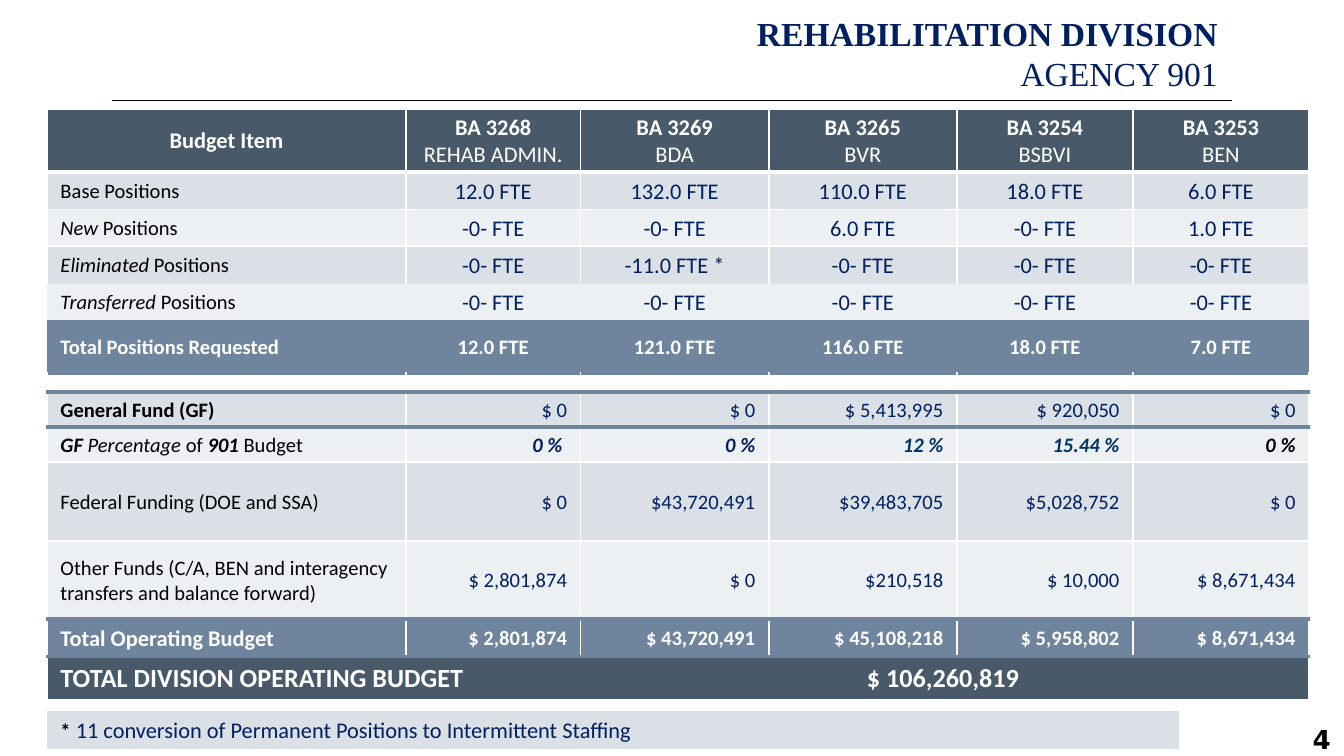
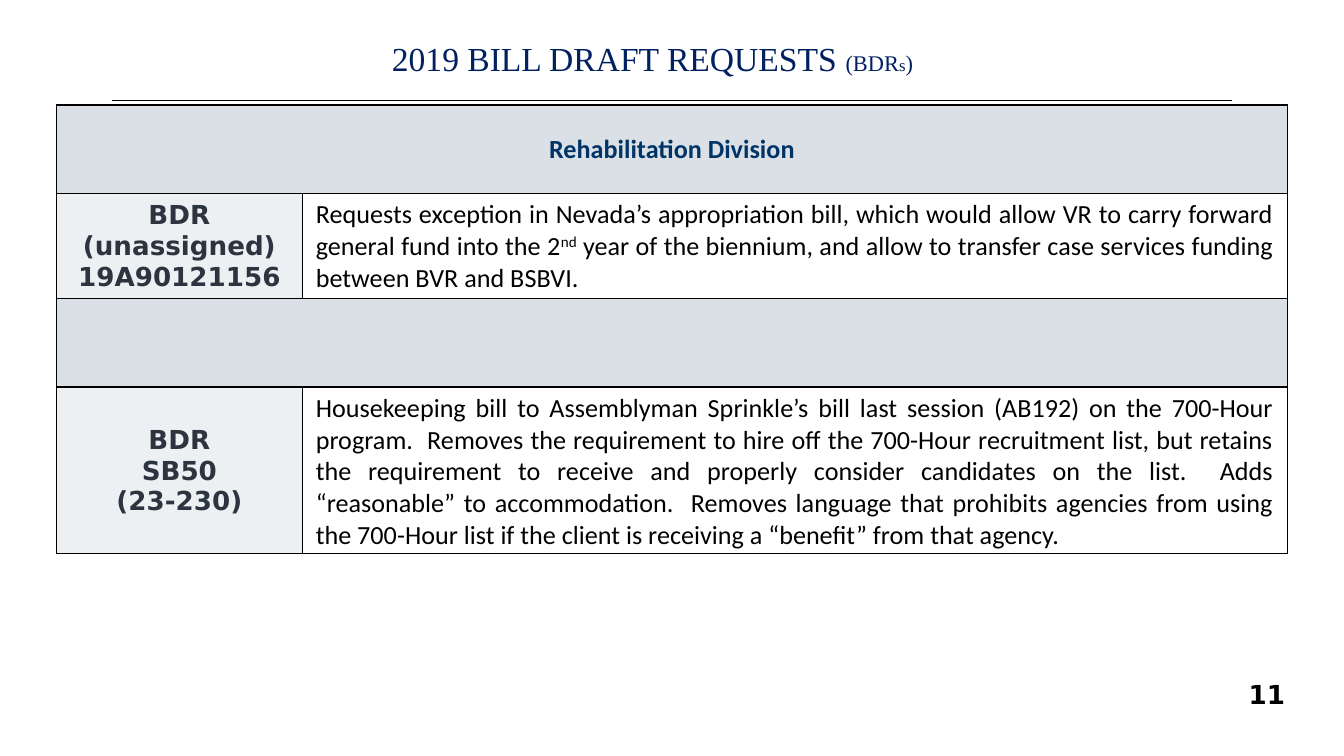
"""Build two slides on the Rehabilitation Division budget and bill draft requests."""
from lxml import etree
from pptx import Presentation
from pptx.dml.color import RGBColor
from pptx.enum.shapes import MSO_CONNECTOR
from pptx.enum.text import MSO_ANCHOR, PP_ALIGN
from pptx.oxml.ns import qn
from pptx.util import Inches, Pt

LEFT, MID, RIGHT, JUST = PP_ALIGN.LEFT, PP_ALIGN.CENTER, PP_ALIGN.RIGHT, PP_ALIGN.JUSTIFY
CENTRE, TOP = MSO_ANCHOR.MIDDLE, MSO_ANCHOR.TOP
STRAIGHT = MSO_CONNECTOR.STRAIGHT
WHITE = RGBColor(0xFF, 0xFF, 0xFF)
BLACK = RGBColor(0, 0, 0)
NAVY = RGBColor(0, 0x20, 0x60)
BLUE = RGBColor(0, 0x33, 0x66)
SLATE = RGBColor(0x48, 0x59, 0x6A)
STEEL = RGBColor(0x6E, 0x85, 0x9D)
PALE = RGBColor(0xDA, 0xE0, 0xE6)
LIGHT = RGBColor(0xED, 0xF0, 0xF3)
INK = RGBColor(0x2C, 0x35, 0x3F)
SANS, SERIF, WIDE = "Calibri", "Times New Roman", "DejaVu Sans"


def write(frame, paras, align, font=SANS):
    """Fill a text frame; each paragraph is a list of (text, size, colour, style) runs."""
    frame.word_wrap = True
    for n, runs in enumerate(paras):
        para = frame.paragraphs[0] if n == 0 else frame.add_paragraph()
        para.alignment = align
        for text, size, color, style in runs:
            run = para.add_run()
            run.text = text
            run.font.name = font
            run.font.size = Pt(size)
            run.font.color.rgb = color
            run.font.bold = "b" in style
            run.font.italic = "i" in style
            if "^" in style:
                run._r.get_or_add_rPr().set("baseline", "30000")


def paint(cell, fill, edges):
    """Set the insets, the left, right, top and bottom edges, and the fill of a cell."""
    cell.margin_left = cell.margin_right = Inches(0.1)
    cell.margin_top, cell.margin_bottom = Inches(0.04), Inches(0.03)
    cell.vertical_anchor = CENTRE
    props = cell._tc.get_or_add_tcPr()
    for side, edge in zip("LRTB", edges):
        line = etree.SubElement(props, qn("a:ln" + side))
        if edge is None:
            etree.SubElement(line, qn("a:noFill"))
            continue
        color, width = edge
        line.set("w", str(Pt(width)))
        solid = etree.SubElement(line, qn("a:solidFill"))
        etree.SubElement(solid, qn("a:srgbClr"), val=str(color))
    if fill is None:
        cell.fill.background()
    else:
        cell.fill.solid()
        cell.fill.fore_color.rgb = fill


deck = Presentation()
deck.slide_width, deck.slide_height = Inches(10), Inches(10 * 9 / 16)
pages = []
for num, left, top in (("4", 7.67, 5.33), ("11", 7.33, 5)):
    page = deck.slides.add_slide(deck.slide_layouts[6])
    rule = page.shapes.add_connector(
        STRAIGHT, Inches(0.83), Inches(0.75), Inches(9.17), Inches(0.75))
    rule.line.color.rgb = BLACK
    rule.line.width = Pt(0.75)
    etree.SubElement(rule._element.spPr, qn("a:effectLst"))
    box = page.shapes.add_textbox(Inches(left), Inches(top), Inches(2.33), Inches(0.39))
    write(box.text_frame, [[(num, 14, BLACK, "b")]], RIGHT, WIDE)
    pages.append(page)

heads = (
    (0.83, 0.04, 8.33, CENTRE, RIGHT,
     [[("REHABILITATION DIVISION", 18, NAVY, "b")], [("AGENCY 901", 18, NAVY, "")]]),
    (-0.67, 0.23, 11.05, TOP, MID,
     [[("2019 BILL DRAFT REQUESTS ", 18, NAVY, ""), ("(BDR", 12, NAVY, ""),
       ("s", 9, NAVY, ""), (")", 12, NAVY, "")]]),
)
for page, (left, top, width, anchor, align, paras) in zip(pages, heads):
    box = page.shapes.add_textbox(Inches(left), Inches(top), Inches(width), Inches(0.71))
    box.text_frame.vertical_anchor = anchor
    write(box.text_frame, paras, align, SERIF)

grids = []
for page, left, top, cols, rows in (
    (pages[0], 0.35, 0.81, (2.67, 1.3, 1.4, 1.4, 1.31, 1.31),
     (0.47, 0.28, 0.27, 0.28, 0.27, 0.4, 0.13, 0.26, 0.26, 0.59, 0.58, 0.28, 0.32)),
    (pages[0], 0.35, 5.29, (8.42,), (0.28,)),
    (pages[1], 0.42, 0.78, (1.83, 7.33), (0.66, 0.78, 0.66, 1.24)),
):
    grid = page.shapes.add_table(
        len(rows), len(cols), Inches(left), Inches(top),
        Inches(sum(cols)), Inches(sum(rows))).table
    grid.first_row = grid.horz_banding = False
    for col, width in zip(grid.columns, cols):
        col.width = Inches(width)
    for row, height in zip(grid.rows, rows):
        row.height = Inches(height)
    grids.append(grid)
budget, note, bills = grids

thin, band, bare = (WHITE, 1), (STEEL, 2.25), (None,) * 4
plain = (thin,) * 4
under = (thin, thin, thin, band)
over = (thin, thin, band, thin)
both = (thin, thin, band, band)
none = "-0- FTE"
navy, white = (NAVY,) * 5, (WHITE,) * 5
lines = (
    (PALE, (thin, thin, (WHITE, 3), thin), [("Base Positions", 11, BLACK, "")],
     MID, 12, navy, "", ("12.0 FTE", "132.0 FTE", "110.0 FTE", "18.0 FTE", "6.0 FTE")),
    (LIGHT, plain, [("New", 11, BLACK, "i"), (" Positions", 11, BLACK, "")],
     MID, 12, navy, "", (none, none, "6.0 FTE", none, "1.0 FTE")),
    (PALE, (thin, thin, thin, None),
     [("Eliminated ", 11, BLACK, "i"), ("Positions", 11, BLACK, "")],
     MID, 12, navy, "", (none, "-11.0 FTE *", none, none, none)),
    (LIGHT, bare, [("Transferred ", 11, BLACK, "i"), ("Positions", 11, BLACK, "")],
     MID, 12, navy, "", (none,) * 5),
    (STEEL, (None, None, None, band), [("Total Positions Requested", 11, WHITE, "b")],
     MID, 11, white, "b", ("12.0 FTE", "121.0 FTE", "116.0 FTE", "18.0 FTE", "7.0 FTE")),
    (WHITE, both, [], LEFT, 11, navy, "", ("",) * 5),
    (PALE, both, [("General Fund (GF)", 11, BLACK, "b")], RIGHT, 11, navy, "",
     ("$ 0", "$ 0", "$ 5,413,995", "$ 920,050", "$ 0")),
    (LIGHT, over,
     [("GF ", 11, BLACK, "bi"), ("Percentage", 11, BLACK, "i"), (" of ", 11, BLACK, ""),
      ("901", 11, BLACK, "bi"), (" Budget", 11, BLACK, "")],
     RIGHT, 11, (NAVY, NAVY, BLUE, BLUE, BLACK), "bi",
     ("0 % ", "0 %", "12 %", "15.44 %", "0 %")),
    (PALE, plain, [("Federal Funding (DOE and SSA)", 11, BLACK, "")], RIGHT, 11, navy, "",
     ("$ 0", "$43,720,491", "$39,483,705", "$5,028,752", "$ 0")),
    (LIGHT, under,
     [("Other Funds (C/A, BEN and interagency transfers and balance forward)",
       11, BLACK, "")],
     RIGHT, 11, navy, "", ("$ 2,801,874", "$ 0", "$210,518", "$ 10,000", "$ 8,671,434")),
    (STEEL, both, [("Total Operating Budget", 12, WHITE, "b")], RIGHT, 11, white, "b",
     ("$ 2,801,874", "$ 43,720,491", "$ 45,108,218", "$ 5,958,802", "$ 8,671,434")),
)
units = (("Budget Item",), ("BA 3268", "REHAB ADMIN."), ("BA 3269", "BDA"),
         ("BA 3265", "BVR"), ("BA 3254", "BSBVI"), ("BA 3253", "BEN"))
for c, unit in enumerate(units):
    cell = budget.cell(0, c)
    paint(cell, SLATE, (thin, thin, thin, (WHITE, 3)))
    write(cell.text_frame,
          [[(text, 12, WHITE, style)] for text, style in zip(unit, ("b", ""))], MID)

for r, (fill, edges, label, align, size, tints, style, values) in enumerate(lines, 1):
    runs = [label] + [[(v, size, t, style)] if v else [] for v, t in zip(values, tints)]
    for c, run in enumerate(runs):
        cell = budget.cell(r, c)
        paint(cell, fill, edges)
        write(cell.text_frame, [run], align if c else LEFT)
        if not run:
            para = cell.text_frame.paragraphs[0]._p
            etree.SubElement(para, qn("a:endParaRPr"), sz="400")

last = len(lines) + 1
for c in range(6):
    paint(budget.cell(last, c), SLATE, over)
total = budget.cell(last, 0)
total.merge(budget.cell(last, 5))
props = total.text_frame.paragraphs[0]._p.get_or_add_pPr()
tabs = etree.SubElement(props, qn("a:tabLst"))
etree.SubElement(tabs, qn("a:tab"), pos=str(Inches(6)), algn="l")
write(total.text_frame,
      [[("TOTAL DIVISION OPERATING BUDGET\t$ 106,260,819", 14, WHITE, "b")]], LEFT)

cell = note.cell(0, 0)
paint(cell, PALE, bare)
write(cell.text_frame,
      [[("*", 11, BLACK, "b"),
        (" 11 conversion of Permanent Positions to Intermittent Staffing", 12, NAVY, "")]], JUST)
cell.text_frame.paragraphs[0].space_after = Pt(6)

frame = ((BLACK, 1),) * 4
for r in (0, 2):
    for c in (0, 1):
        paint(bills.cell(r, c), PALE, frame)
    bills.cell(r, 0).merge(bills.cell(r, 1))
write(bills.cell(0, 0).text_frame, [[("Rehabilitation Division", 14, BLUE, "b")]], MID)
drafts = (
    (1, ("BDR", "(unassigned) 19A90121156"),
     [("Requests exception in Nevada’s appropriation bill, which would allow VR to carry "
       "forward general fund into the 2", 14, BLACK, ""),
      ("nd", 14, BLACK, "^"),
      (" year of the biennium, and allow to transfer case services funding between BVR "
       "and BSBVI.", 14, BLACK, "")]),
    (3, ("BDR", "SB50", "(23-230)"),
     [("Housekeeping bill to Assemblyman Sprinkle’s bill last session (AB192) on the "
       "700-Hour program.  Removes the requirement to hire off the 700-Hour recruitment "
       "list, but retains the requirement to receive and properly consider candidates on "
       "the list.  Adds “reasonable” to accommodation.  Removes language that prohibits "
       "agencies from using the 700-Hour list if the client is receiving a “benefit” from "
       "that agency.", 14, BLACK, "")]),
)
for r, names, body in drafts:
    paint(bills.cell(r, 0), LIGHT, frame)
    paint(bills.cell(r, 1), None, frame)
    write(bills.cell(r, 0).text_frame, [[(n, 14, INK, "b")] for n in names], MID, WIDE)
    write(bills.cell(r, 1).text_frame, [body], JUST)

deck.save("out.pptx")
